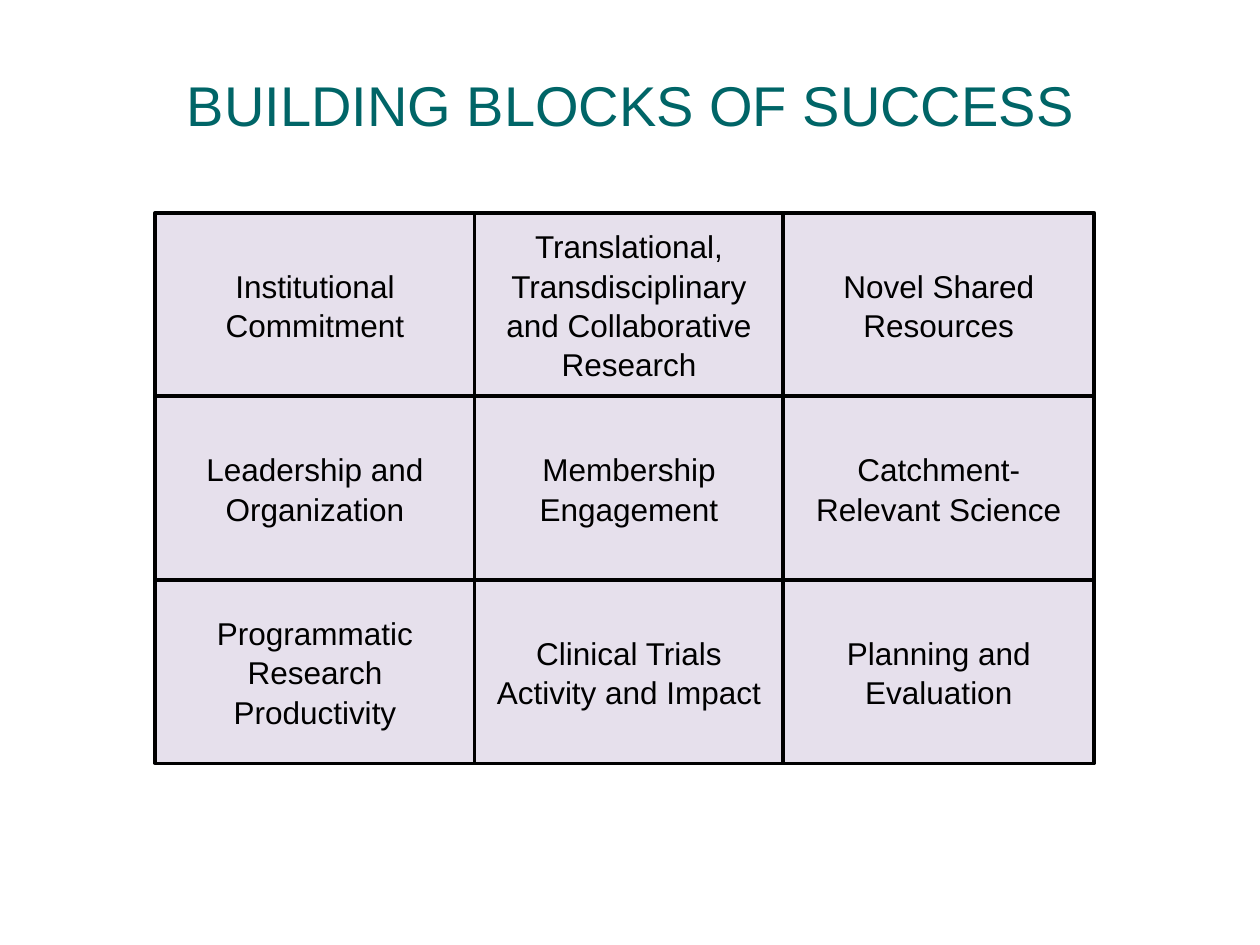
import pptx
import pptx.dml.color
import pptx.enum.shapes
import pptx.enum.text
import pptx.util

Cm = pptx.util.Cm
Pt = pptx.util.Pt


def color(value):
    return pptx.dml.color.RGBColor.from_string(value)


def write_centered(text_frame, text, size, value, line_spacing):
    text_frame.word_wrap = True
    text_frame.text = text
    for paragraph in text_frame.paragraphs:
        paragraph.alignment = pptx.enum.text.PP_ALIGN.CENTER
        paragraph.line_spacing = line_spacing
        for run in paragraph.runs:
            run.font.name = "Arial"
            run.font.size = Pt(size)
            run.font.color.rgb = color(value)


presentation = pptx.Presentation()
presentation.slide_width = Cm(25.4)
presentation.slide_height = Cm(19.05)
slide = presentation.slides.add_slide(presentation.slide_layouts[6])

title = slide.shapes.add_textbox(Cm(0.7), Cm(1.3), Cm(24.03), Cm(3.25))
write_centered(title.text_frame, "BUILDING BLOCKS OF SUCCESS", 32, "006567", 1.0)

blocks = [
    [
        "Institutional Commitment",
        "Translational, Transdisciplinary and Collaborative Research",
        "Novel Shared Resources",
    ],
    [
        "Leadership and Organization",
        "Membership Engagement",
        "Catchment-Relevant Science",
    ],
    [
        "Programmatic\nResearch Productivity",
        "Clinical Trials Activity and Impact",
        "Planning and Evaluation",
    ],
]
column_edges = [3.13, 9.57, 15.79, 22.06]
grid_top = 4.29
block_height = 3.7

for row, labels in enumerate(blocks):
    for column, label in enumerate(labels):
        left, right = column_edges[column:column + 2]
        block = slide.shapes.add_shape(
            pptx.enum.shapes.MSO_SHAPE.RECTANGLE,
            Cm(left), Cm(grid_top + row * block_height),
            Cm(right - left), Cm(block_height),
        )
        block.shadow.inherit = False
        block.fill.solid()
        block.fill.fore_color.rgb = color("E6E0EC")
        block.line.color.rgb = color("000000")
        block.line.width = Pt(2)
        block.text_frame.vertical_anchor = pptx.enum.text.MSO_ANCHOR.MIDDLE
        write_centered(block.text_frame, label, 18, "000000", 1.04)

presentation.save("out.pptx")
